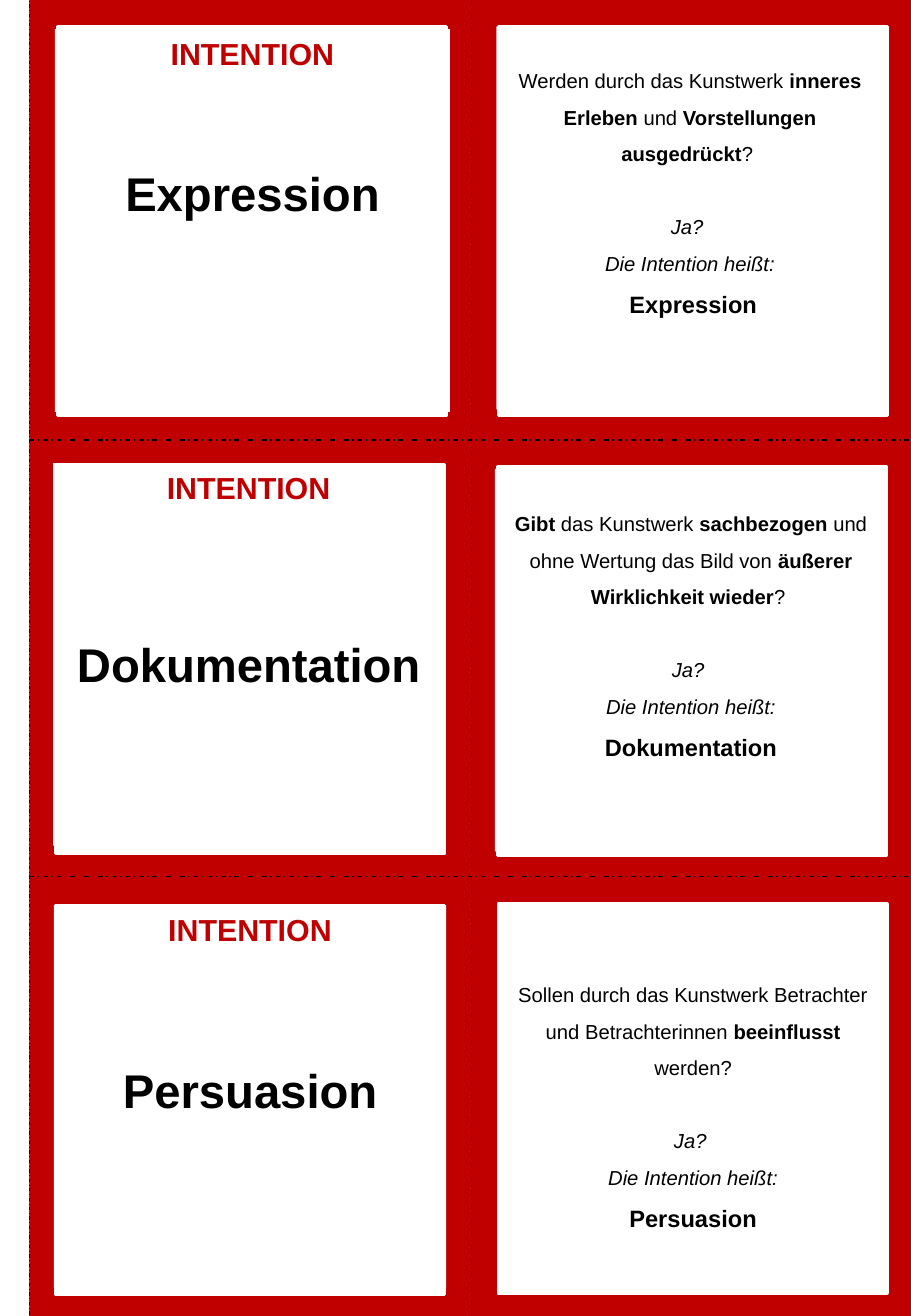
from lxml import etree
from pptx import Presentation
from pptx.dml.color import RGBColor
from pptx.enum.dml import MSO_LINE
from pptx.enum.shapes import MSO_CONNECTOR, MSO_SHAPE
from pptx.enum.text import MSO_ANCHOR, PP_ALIGN
from pptx.oxml.ns import qn
from pptx.util import Cm, Pt

DASH_DOT = MSO_LINE.DASH_DOT
STRAIGHT = MSO_CONNECTOR.STRAIGHT
RECTANGLE = MSO_SHAPE.RECTANGLE
TOP = MSO_ANCHOR.TOP
CENTER = PP_ALIGN.CENTER
RED, BLACK, WHITE = "C00000", "000000", "FFFFFF"
FONT = "Arial"
PAGE_WIDTH, PAGE_HEIGHT = 19.05, 27.51
FRAME_SIZE = 8.13
TEXT_HEIGHT = 8
LINE_GAP = 21.7


def add_panel(left, top, width, height):
    panel = page.shapes.add_shape(RECTANGLE, Cm(left), Cm(top), Cm(width), Cm(height))
    panel.shadow.inherit = False
    panel.fill.solid()
    panel.fill.fore_color.rgb = RGBColor.from_string(WHITE)
    panel.line.fill.background()
    panel.text_frame.word_wrap = True
    panel.text_frame.vertical_anchor = TOP
    return panel


def add_para(box, runs, size, color=BLACK, italic=False, before=0, spacing=1.0):
    frame = box.text_frame
    para = frame.add_paragraph() if frame.text else frame.paragraphs[0]
    para.alignment = CENTER
    para.line_spacing = spacing
    para.space_before = Pt(before)
    for text, bold in runs:
        span = para.add_run()
        span.text = text
        span.font.name = FONT
        span.font.size = Pt(size)
        span.font.bold = bold
        span.font.italic = italic
        span.font.color.rgb = RGBColor.from_string(color)


deck = Presentation()
deck.slide_width = Cm(PAGE_WIDTH)
deck.slide_height = Cm(PAGE_HEIGHT)
page = deck.slides.add_slide(deck.slide_layouts[6])
page.background.fill.solid()
page.background.fill.fore_color.rgb = RGBColor.from_string(RED)

cut_lines = [
    (9.86, 0, 9.86, PAGE_HEIGHT),
    (0.61, 9.2, PAGE_WIDTH, 9.2),
    (0.61, 18.33, PAGE_WIDTH, 18.33),
]
for start_x, start_y, end_x, end_y in cut_lines:
    cut = page.shapes.add_connector(
        STRAIGHT, Cm(start_x), Cm(start_y), Cm(end_x), Cm(end_y))
    cut.line.color.rgb = RGBColor.from_string(BLACK)
    cut.line.width = Pt(0.75)
    cut.line.dash_style = DASH_DOT
    etree.SubElement(cut._element.spPr, qn("a:effectLst"))

margin = add_panel(-0.08, -0.03, 0.69, 27.56)
margin.line.color.rgb = RGBColor.from_string(BLACK)
margin.line.width = Pt(0.5)
margin.line.dash_style = DASH_DOT

frames = [
    (1.2, 0.56), (1.16, 9.72), (1.17, 18.93),
    (10.43, 0.56), (10.4, 9.75), (10.42, 18.9),
]
for left, top in frames:
    frame_panel = add_panel(left, top, FRAME_SIZE, FRAME_SIZE)
    frame_panel.line.color.rgb = RGBColor.from_string(WHITE)
    frame_panel.line.width = Pt(2)

front_cards = [
    ("Expression", 1.15, 0.61, 8.26, 54.7),
    ("Dokumentation", 1.11, 9.68, 8.18, 77.2),
    ("Persuasion", 1.13, 18.92, 8.2, 67.4),
]
for term, left, top, width, gap in front_cards:
    box = add_panel(left, top, width, TEXT_HEIGHT)
    add_para(box, [("INTENTION", True)], 18, RED)
    add_para(box, [(term, True)], 28, before=gap)

back_cards = [
    (" Expression", 10.38, 0.56, 8.1, 0.62, [
        ("Werden durch das Kunstwerk ", False),
        ("inneres Erleben ", True),
        ("und ", False),
        ("Vorstellungen ausgedrückt", True),
        ("? ", False),
    ]),
    ("Dokumentation", 10.35, 9.8, 8.2, 0.64, [
        ("Gibt", True),
        (" das Kunstwerk ", False),
        ("sachbezogen ", True),
        ("und ohne Wertung das Bild von ", False),
        ("äußerer Wirklichkeit wieder", True),
        ("? ", False),
    ]),
    ("Persuasion", 10.42, 18.9, 8.15, 1.39, [
        ("Sollen durch das Kunstwerk Betrachter und Betrachterinnen ", False),
        ("beeinflusst ", True),
        ("werden?", False),
    ]),
]
for term, left, top, width, inset, question in back_cards:
    box = add_panel(left, top, width, TEXT_HEIGHT)
    box.text_frame.margin_top = Cm(inset)
    add_para(box, question, 12, spacing=1.5)
    add_para(box, [("Ja? ", False)], 12, italic=True, before=LINE_GAP, spacing=1.5)
    add_para(box, [("Die Intention heißt:", False)], 12, italic=True, spacing=1.5)
    add_para(box, [(term, True)], 14, spacing=1.5)

deck.save("out.pptx")
